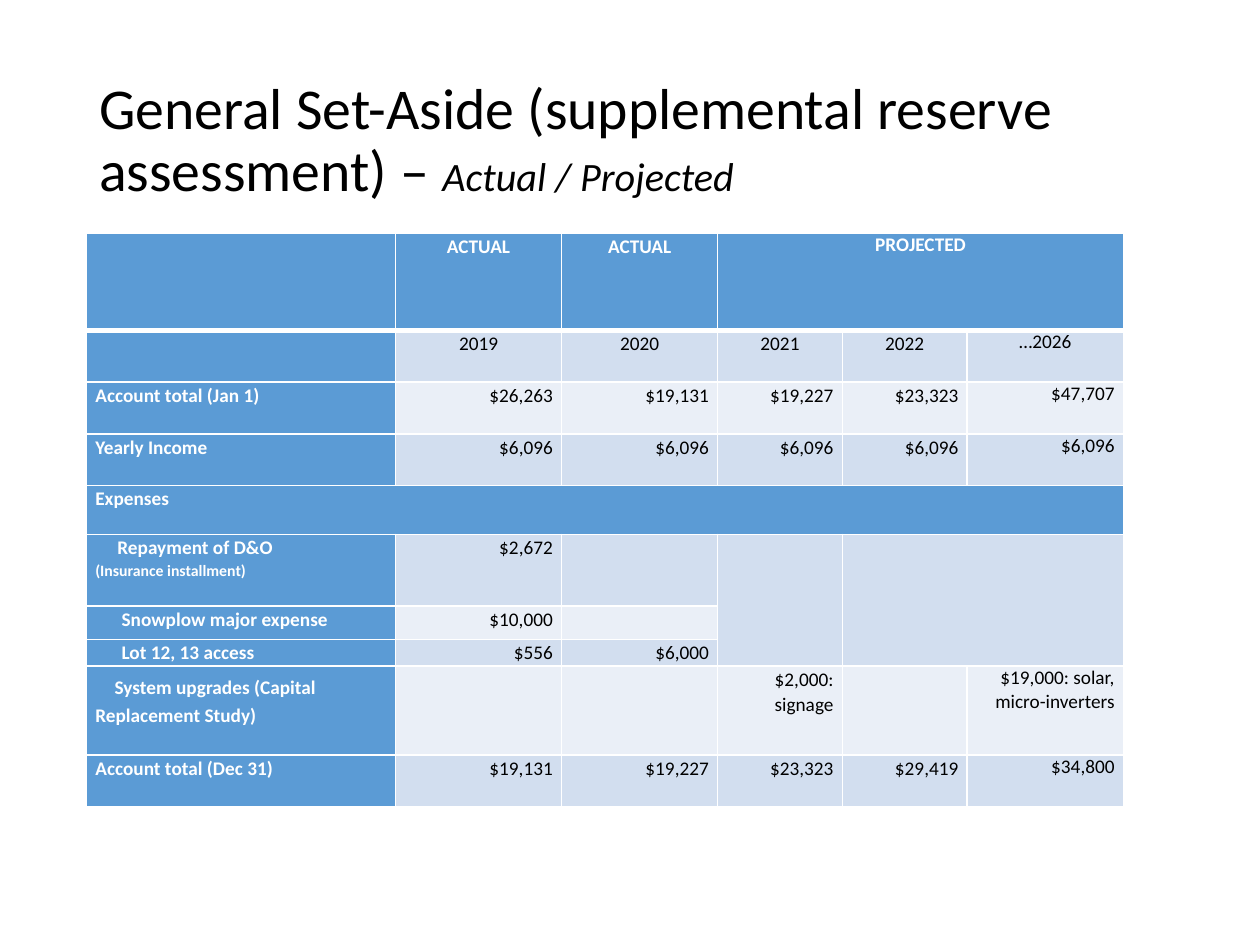
from dataclasses import dataclass
from itertools import accumulate

from lxml.etree import SubElement
from pptx import Presentation
from pptx.dml.color import RGBColor
from pptx.enum.text import MSO_ANCHOR, MSO_AUTO_SIZE, PP_ALIGN
from pptx.oxml import parse_xml
from pptx.oxml.ns import nsdecls, qn
from pptx.util import Pt


@dataclass(frozen=True)
class Theme:
    font: str = "Calibri"
    header: str = "5B9BD5"
    band_dark: str = "D2DEEF"
    band_light: str = "EAEFF7"
    white: str = "FFFFFF"
    black: str = "000000"
    title_size: float = 33
    subtitle_size: float = 23
    text_size: float = 11
    note_size: float = 9
    tall_size: float = 16
    border: float = 1
    header_border: float = 3


@dataclass(frozen=True)
class Box:
    left: float
    top: float
    width: float
    height: float


THEME = Theme()
TITLE_BOX = Box(49.5, 28.8, 621, 104.4)
TABLE_BOX = Box(49.5, 133.2, 592.6, 328)
COLUMN_WIDTHS = [176.5, 95, 89.2, 71.2, 71.4, 89.3]
ROW_HEIGHTS = [55.6, 29.6, 29.6, 29.6, 27.8, 41, 19.2, 15, 51, 29.6]
ROWS = [
    ["", "ACTUAL", "ACTUAL", "PROJECTED", "", ""],
    ["", "2019", "2020", "2021", "2022", "…2026"],
    ["Account total (Jan 1)", "$26,263", "$19,131", "$19,227", "$23,323", "$47,707"],
    ["Yearly Income", "$6,096", "$6,096", "$6,096", "$6,096", "$6,096"],
    ["Expenses", "", "", "", "", ""],
    ["Repayment of D&O\n(Insurance installment)", "$2,672", "", "", "", ""],
    ["Snowplow major expense", "$10,000", "", "", "", ""],
    ["Lot 12, 13 access", "$556", "$6,000", "", "", ""],
    ["System upgrades (Capital\nReplacement Study)", "", "", "$2,000: signage", "",
     "$19,000: solar, micro-inverters"],
    ["Account total (Dec 31)", "$19,131", "$19,227", "$23,323", "$29,419", "$34,800"],
]
HEADER_ROW, YEAR_ROW, EXPENSES_ROW = 0, 1, 4
REPAYMENT_ROW, UPGRADES_ROW = 5, 8
LIGHT_ROWS = {2, 6, 8}
LABEL_INDENTS = {5: 12.6, 6: 15, 7: 15, 8: 7.4}
MERGES = [((0, 3), (0, 5)), ((4, 0), (4, 5)), ((5, 3), (7, 3)), ((5, 4), (7, 5))]


def add_span(para, text, size=None, italic=None):
    span = para.add_run()
    span.text = text
    if size:
        span.font.size = Pt(size)
    if italic:
        span.font.italic = True


def place_title(page, box):
    title = page.shapes.title
    title.left, title.top = Pt(box.left), Pt(box.top)
    title.width, title.height = Pt(box.width), Pt(box.height)
    frame = title.text_frame
    frame.auto_size = MSO_AUTO_SIZE.NONE
    frame.word_wrap = True
    frame.vertical_anchor = MSO_ANCHOR.MIDDLE
    para = frame.paragraphs[0]
    para.alignment = PP_ALIGN.LEFT
    para.line_spacing = 0.9
    para.font.name = THEME.font
    para.font.color.rgb = RGBColor.from_string(THEME.black)
    add_span(para, "General Set-Aside (supplemental reserve assessment) – ", THEME.title_size)
    add_span(para, "Actual / Projected", THEME.subtitle_size, italic=True)


def set_borders(cell, bottom):
    widths = {"lnL": THEME.border, "lnR": THEME.border, "lnT": THEME.border, "lnB": bottom}
    properties = cell._tc.get_or_add_tcPr()
    for position, (side, width) in enumerate(widths.items()):
        properties.insert(position, parse_xml(
            f'<a:{side} {nsdecls("a")} w="{Pt(width)}"><a:solidFill>'
            f'<a:srgbClr val="{THEME.white}"/></a:solidFill></a:{side}>'))


def write_text(para, text, row, column):
    lines = text.split("\n")
    if row == UPGRADES_ROW and column == 0:
        add_span(para, " ", THEME.tall_size)
    for number, line in enumerate(lines):
        if number:
            para.add_line_break()
        is_note = row == REPAYMENT_ROW and number > 0
        if line:
            add_span(para, line, THEME.note_size if is_note else None)
    if not text:
        SubElement(para._p, qn("a:endParaRPr"), sz=str(int(THEME.text_size * 100)))


def fill_cell(cell, text, row, column):
    is_header = row in (HEADER_ROW, EXPENSES_ROW) or column == 0
    band = THEME.band_light if row in LIGHT_ROWS else THEME.band_dark
    cell.fill.solid()
    cell.fill.fore_color.rgb = RGBColor.from_string(THEME.header if is_header else band)
    set_borders(cell, THEME.header_border if row == HEADER_ROW else THEME.border)
    cell.margin_left = cell.margin_right = Pt(5)
    cell.margin_top = cell.margin_bottom = Pt(0)

    para = cell.text_frame.paragraphs[0]
    if column == 0:
        para.alignment = PP_ALIGN.LEFT
    elif row in (HEADER_ROW, YEAR_ROW):
        para.alignment = PP_ALIGN.CENTER
    else:
        para.alignment = PP_ALIGN.RIGHT
    if column < 5 and text != "PROJECTED":
        para.line_spacing = 1.07
        para.space_before = para.space_after = Pt(4)
    para.font.name = THEME.font
    para.font.size = Pt(THEME.text_size)
    para.font.bold = is_header
    para.font.color.rgb = RGBColor.from_string(THEME.white if is_header else THEME.black)
    if column == 0 and row in LABEL_INDENTS:
        para._p.get_or_add_pPr().set("indent", str(Pt(LABEL_INDENTS[row])))
    write_text(para, text, row, column)


def place_table(page, box):
    frame = page.shapes.add_table(len(ROWS), len(COLUMN_WIDTHS), Pt(box.left), Pt(box.top),
                                  Pt(box.width), Pt(box.height))
    table = frame.table
    table.first_row = table.horz_banding = False
    for column, width in zip(table.columns, COLUMN_WIDTHS):
        column.width = Pt(width)
    for row, height in zip(table.rows, ROW_HEIGHTS):
        row.height = Pt(height)
    for row, texts in enumerate(ROWS):
        for column, text in enumerate(texts):
            fill_cell(table.cell(row, column), text, row, column)
    for first, last in MERGES:
        table.cell(*first).merge(table.cell(*last))


def main():
    deck = Presentation()
    deck.slide_width, deck.slide_height = Pt(720), Pt(540)
    page = deck.slides.add_slide(deck.slide_layouts[5])
    place_title(page, TITLE_BOX)
    place_table(page, TABLE_BOX)
    deck.save("out.pptx")


if __name__ == "__main__":
    main()
